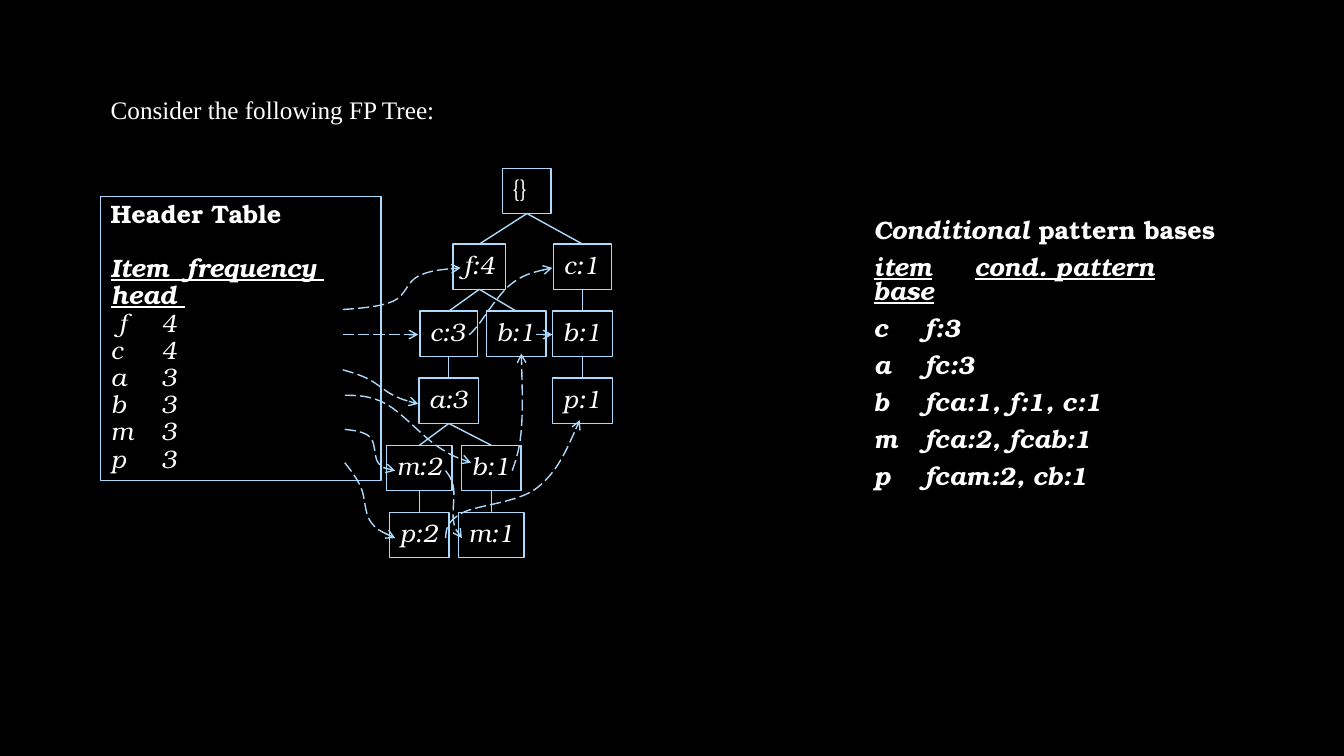
import itertools

import pptx
import pptx.dml.color
import pptx.enum.dml
import pptx.enum.shapes
import pptx.enum.text
import pptx.oxml
import pptx.oxml.ns
import pptx.util

Cm = pptx.util.Cm
Pt = pptx.util.Pt
qn = pptx.oxml.ns.qn
RECT = pptx.enum.shapes.MSO_SHAPE.RECTANGLE
LINE = pptx.enum.shapes.MSO_CONNECTOR.STRAIGHT

BLACK = pptx.dml.color.RGBColor(0x00, 0x00, 0x00)
WHITE = pptx.dml.color.RGBColor(0xFF, 0xFF, 0xFF)
BLUE = pptx.dml.color.RGBColor(0xAB, 0xDA, 0xFC)
SERIF = "TeX Gyre Bonum"
ROMAN = "Times New Roman"

HIGH = 1.14  # node height, cm
STEP = 1.69  # distance between tree levels, cm
WIDTHS = {"{": 1.22, "f": 1.32, "c": 1.45, "m": 1.65}

# text, centre x, level, index of the parent
NODES = [
    ("{}", 4.64, 0, None),
    ("f:4", 3.44, 1, 0),
    ("c:1", 6.04, 1, 0),
    ("c:3", 2.67, 2, 1),
    ("b:1", 4.37, 2, 1),
    ("b:1", 6.04, 2, 2),
    ("a:3", 2.67, 3, 3),
    ("p:1", 6.04, 3, 5),
    ("m:2", 1.93, 4, 6),
    ("b:1", 3.74, 4, 6),
    ("p:2", 1.93, 5, 8),
    ("m:1", 3.74, 5, 9),
]

# knots of each dashed link, from tail to arrowhead
LINKS = [
    [(0, 3.56), (1.27, 3.35), (1.9, 2.72), (2.97, 2.51)],
    [(0, 4.19), (1.9, 4.19)],
    [(3.18, 4.19), (3.38, 3.99), (4.24, 2.92), (5.28, 2.51)],
    [(0, 5.08), (0.64, 5.31), (1.27, 5.72), (1.9, 5.94)],
    [(0.05, 5.72), (1.09, 5.94), (2.36, 6.99), (3.23, 7.42)],
    [(4.27, 7.62), (4.5, 6.58), (4.5, 4.67)],
    [(4.88, 4.19), (5.28, 4.19)],
    [(0.05, 6.58), (0.69, 6.78), (0.89, 7.42), (1.32, 7.62)],
    [(2.59, 7.62), (2.79, 8.05), (2.79, 8.89), (3, 9.32)],
    [(0.05, 7.42), (0.46, 8.05), (0.69, 8.89), (1.32, 9.32)],
    [(2.59, 9.32), (3, 8.69), (4.9, 8.05), (5.97, 6.35)],
]

ITEMS = [("f", 4), ("c", 4), ("a", 3), ("b", 3), ("m", 3), ("p", 3)]
BASES = [
    ("c", "f:3"),
    ("a", "fc:3"),
    ("b", "fca:1, f:1, c:1"),
    ("m", "fca:2, fcab:1"),
    ("p", "fcam:2, cb:1"),
]


def stroke(shape, arrow=False):
    """Draw a thin blue line without shadow; an arrow is dashed."""
    shape.line.color.rgb = BLUE
    shape.line.width = Pt(1)
    props = shape._element.spPr
    if arrow:
        shape.line.dash_style = pptx.enum.dml.MSO_LINE.LONG_DASH
        tail = props.find(qn("a:ln")).makeelement(qn("a:tailEnd"), {"type": "arrow"})
        props.find(qn("a:ln")).append(tail)
    props.append(props.makeelement(qn("a:effectLst"), {}))


def write(frame, lines, wrap=True, lead=None, gap=0):
    """Fill a frame with lines, each a list of (text, marks) runs; marks use b, i, u."""
    frame.word_wrap = wrap
    frame.auto_size = pptx.enum.text.MSO_AUTO_SIZE.SHAPE_TO_FIT_TEXT
    frame.vertical_anchor = pptx.enum.text.MSO_ANCHOR.TOP
    for num, runs in enumerate(lines):
        para = frame.add_paragraph() if num else frame.paragraphs[0]
        para.alignment = pptx.enum.text.PP_ALIGN.LEFT
        para.line_spacing = lead
        para.space_before = Pt(gap)
        para.font.size = Pt(18)
        for text, marks in runs:
            run = para.add_run()
            run.text = text
            run.font.name = SERIF
            run.font.size = Pt(18)
            run.font.color.rgb = WHITE
            run.font.bold = "b" in marks
            run.font.italic = "i" in marks
            run.font.underline = "u" in marks


def frame_box(slide, left, top, width, height):
    box = slide.shapes.add_shape(RECT, Cm(left), Cm(top), Cm(width), Cm(height))
    box.fill.background()
    stroke(box)
    return box.text_frame


def join(slide, start, end, arrow=False):
    ends = [Cm(val) for val in start + end]
    stroke(slide.shapes.add_connector(LINE, *ends), arrow)


def curve(slide, knots):
    """Draw a smooth dashed arrow through the knots."""
    bends = []
    for prev, here, then in zip(knots, knots[1:], knots[2:]):
        lean = [(b - a) / 6 for a, b in zip(prev, then)]
        bends.append([tuple(p + s * d for p, d in zip(here, lean)) for s in (-1, 1)])
    first = tuple((a + b) / 2 for a, b in zip(knots[0], bends[0][0]))
    last = tuple((a + b) / 2 for a, b in zip(knots[-1], bends[-1][1]))
    outs = [first] + [bend[1] for bend in bends]
    ins = [bend[0] for bend in bends] + [last]
    points = itertools.chain.from_iterable(zip(outs, ins, knots[1:]))

    pen = slide.shapes.build_freeform(Cm(knots[0][0]), Cm(knots[0][1]))
    pen.add_line_segments([(Cm(x), Cm(y)) for x, y in points], close=False)
    shape = pen.convert_to_shape()
    shape.fill.background()
    stroke(shape, arrow=True)
    legs = shape._element.findall(".//" + qn("a:lnTo"))
    for num in range(0, len(legs), 3):
        cubic = legs[num].makeelement(qn("a:cubicBezTo"), {})
        legs[num].addprevious(cubic)
        for leg in legs[num:num + 3]:
            cubic.append(leg[0])
            leg.getparent().remove(leg)


def tree(slide, left, top):
    spots = []
    for text, mid, level, up in NODES:
        x = left + mid
        y = top + (1.91 + STEP * (level - 1) if level else 0)
        wide = WIDTHS.get(text[0], 1.5)
        box = frame_box(slide, x - wide / 2, y, wide, HIGH)
        write(box, [[(text, "i" if level else "")]], wrap=False)
        if up is not None:
            join(slide, (spots[up][0], spots[up][1] + HIGH), (x, y))
        spots.append((x, y))
    for link in LINKS:
        knots = [(left + x, top + y) for x, y in link]
        if len(knots) == 2:
            join(slide, *knots, arrow=True)
        else:
            curve(slide, knots)


def header(slide, left, top, width, height):
    lines = [[("Header Table", "b")], [], [("Item  frequency  head ", "biu")]]
    for name, count in ITEMS:
        lead = " " if name == "f" else ""
        lines.append([(f"{lead}{name}\t{count}", "i")])
    write(frame_box(slide, left, top, width, height), lines, lead=0.9)


def bases(slide, left, top, width, height):
    box = slide.shapes.add_textbox(Cm(left), Cm(top), Cm(width), Cm(height))
    lines = [
        [("Conditional ", "bi"), ("pattern bases", "b")],
        [("item\tcond. pattern base", "biu")],
    ]
    lines += [[(f"{name}\t{base}", "bi")] for name, base in BASES]
    write(box.text_frame, lines, lead=0.8, gap=9)
    box.text_frame.paragraphs[0].line_spacing = 1.0


def title(slide, left, top, width, height):
    box = slide.shapes.add_textbox(Cm(left), Cm(top), Cm(width), Cm(height))
    write(box.text_frame, [[("Consider the following FP Tree:", "")]], wrap=False)
    box.text_frame.paragraphs[0].runs[0].font.name = ROMAN


def main():
    deck = pptx.Presentation()
    deck.slide_width, deck.slide_height = Cm(33.87), Cm(19.05)
    slide = deck.slides.add_slide(deck.slide_layouts[6])
    slide.background.fill.solid()
    slide.background.fill.fore_color.rgb = BLACK
    tree(slide, 8.64, 4.24)
    header(slide, 2.54, 4.95, 7.06, 7.16)
    bases(slide, 21.77, 5.28, 9.25, 7.72)
    title(slide, 2.54, 2.24, 8.76, 1.02)
    deck.save("out.pptx")


if __name__ == "__main__":
    main()
